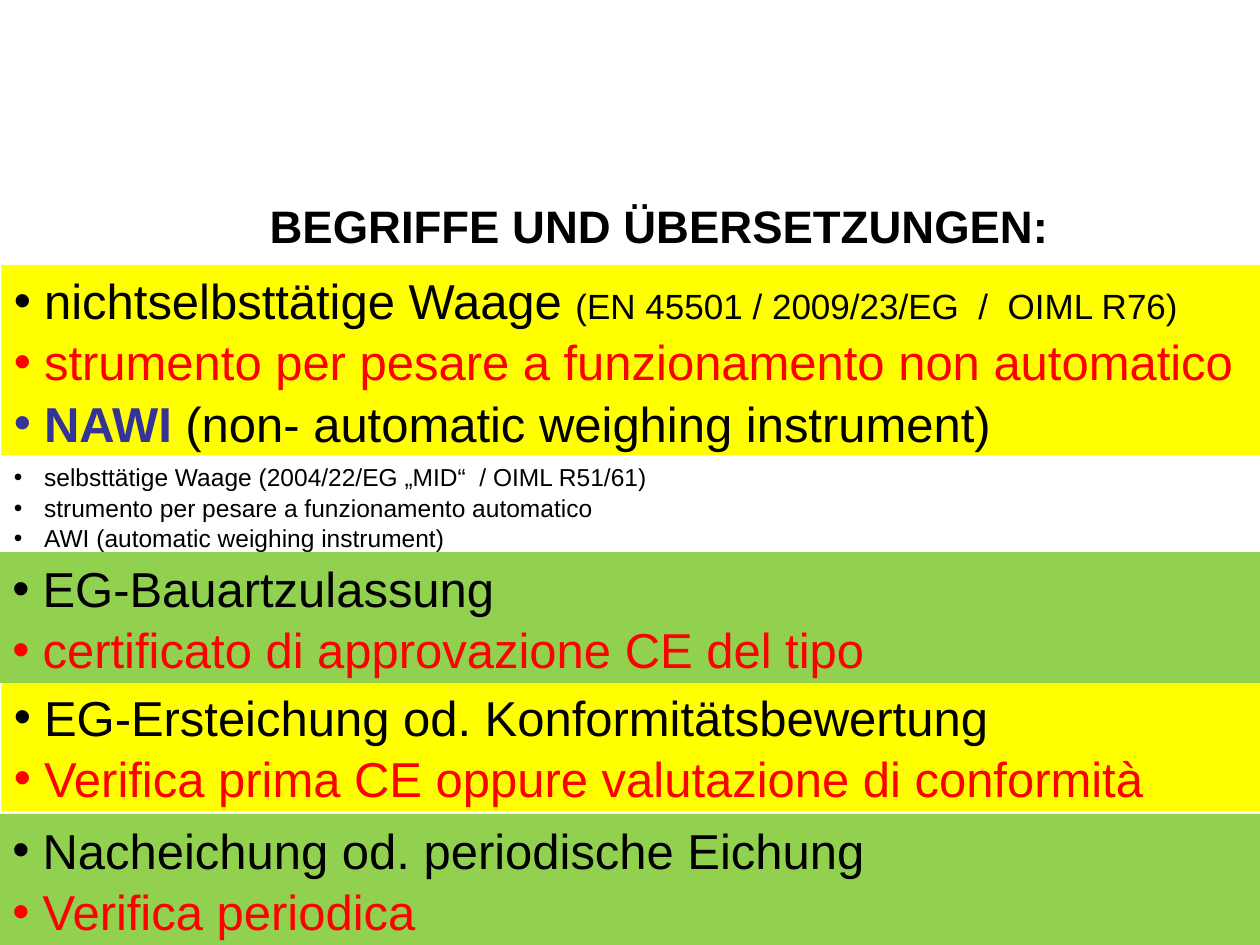
from dataclasses import dataclass

from lxml.etree import SubElement
from pptx import Presentation
from pptx.dml.color import RGBColor as Rgb
from pptx.enum.text import MSO_ANCHOR as Anchor, MSO_AUTO_SIZE as AutoSize, PP_ALIGN as Align
from pptx.oxml.ns import qn
from pptx.util import Cm, Pt


@dataclass(frozen=True)
class Theme:
    font: str = "Arial"
    black: Rgb = Rgb(0, 0, 0)
    red: Rgb = Rgb(255, 0, 0)
    blue: Rgb = Rgb(0x33, 0x33, 0x99)
    white: Rgb = Rgb(255, 255, 255)
    yellow: Rgb = Rgb(255, 255, 0)
    green: Rgb = Rgb(0x92, 0xD0, 0x50)
    title: Pt = Pt(26)
    term: Pt = Pt(28)
    reference: Pt = Pt(20)
    minor: Pt = Pt(14)


THEME = Theme()
BULLET_INDENT = Cm(0.61)
LINE_SPACING = 1.04
PAGE_WIDTH, PAGE_HEIGHT = 25.4, 19.05


def place(shape, box):
    """Move a text shape to a box (left, top, width, height in cm)."""
    shape.left, shape.top, shape.width, shape.height = map(Cm, box)
    frame = shape.text_frame
    frame.word_wrap = True
    frame.auto_size = AutoSize.NONE
    frame.vertical_anchor = Anchor.MIDDLE
    frame.margin_left = frame.margin_right = Cm(0.25)
    frame.margin_top = frame.margin_bottom = Cm(0.13)
    return frame


def set_font(font, size, color, bold=False):
    font.name, font.size, font.bold = THEME.font, size, bold
    font.color.rgb = color


def add_bullet(para):
    props = para._p.get_or_add_pPr()
    props.set("marL", str(BULLET_INDENT))
    props.set("indent", str(-BULLET_INDENT))
    SubElement(props, qn("a:buFont"), typeface=THEME.font)
    SubElement(props, qn("a:buChar"), char="•")


def fill_title(shape, box, text):
    para = place(shape, box).paragraphs[0]
    para.text = text
    para.alignment = Align.CENTER
    set_font(para.font, THEME.title, THEME.black, bold=True)


def fill_band(shape, box, color, lines):
    """Fill a coloured band with bullets; a line is a list of (text, size, colour, bold)."""
    frame = place(shape, box)
    shape.fill.solid()
    shape.fill.fore_color.rgb = color
    for index, line in enumerate(lines):
        para = frame.paragraphs[0] if index == 0 else frame.add_paragraph()
        para.alignment = Align.LEFT
        para.line_spacing = LINE_SPACING
        para.space_before = para.space_after = Pt(0)
        add_bullet(para)
        for text, *style in line:
            span = para.add_run()
            span.text = text
            set_font(span.font, *style)


def term_pair(german, italian):
    return [[(german, THEME.term, THEME.black)], [(italian, THEME.term, THEME.red)]]


def build_terms_page(page):
    # Heading
    fill_title(page.shapes.title, (4.9, 3.86, 16.79, 1.37), "BEGRIFFE UND ÜBERSETZUNGEN:")

    # Terms and their translations
    non_automatic = term_pair("nichtselbsttätige Waage ",
                              "strumento per pesare a funzionamento non automatico")
    non_automatic[0].append(
        ("(EN 45501 / 2009/23/EG  /  OIML R76)", THEME.reference, THEME.black))
    non_automatic.append([
        ("NAWI", THEME.term, THEME.blue, True),
        (" (non- automatic weighing instrument)", THEME.term, THEME.black)])
    automatic = [[(text, THEME.minor, THEME.black)] for text in (
        "selbsttätige Waage (2004/22/EG „MID“  / OIML R51/61)",
        "strumento per pesare a funzionamento automatico",
        "AWI (automatic weighing instrument)")]
    approval = term_pair("EG-Bauartzulassung", "certificato di approvazione CE del tipo")
    first_check = term_pair("EG-Ersteichung od. Konformitätsbewertung",
                            "Verifica prima CE oppure valutazione di conformità")
    later_check = term_pair("Nacheichung od. periodische Eichung", "Verifica periodica")

    # Bands from back to front: left, top, height, colour, lines
    bands = [
        (0.03, 5.34, 3.84, THEME.yellow, non_automatic),
        (0.03, 9.19, 2.06, THEME.white, automatic),
        (0.03, 13.72, 2.64, THEME.yellow, first_check),
        (0, 16.41, 2.64, THEME.green, later_check),
        (0, 11.13, 2.64, THEME.green, approval),
    ]
    for index, (left, top, height, color, lines) in enumerate(bands):
        box = (left, top, PAGE_WIDTH, height)
        shape = page.placeholders[1] if index == 0 else page.shapes.add_textbox(*map(Cm, box))
        fill_band(shape, box, color, lines)


def main():
    deck = Presentation()
    deck.slide_width, deck.slide_height = Cm(PAGE_WIDTH), Cm(PAGE_HEIGHT)
    build_terms_page(deck.slides.add_slide(deck.slide_layouts[1]))
    deck.save("out.pptx")


if __name__ == "__main__":
    main()
